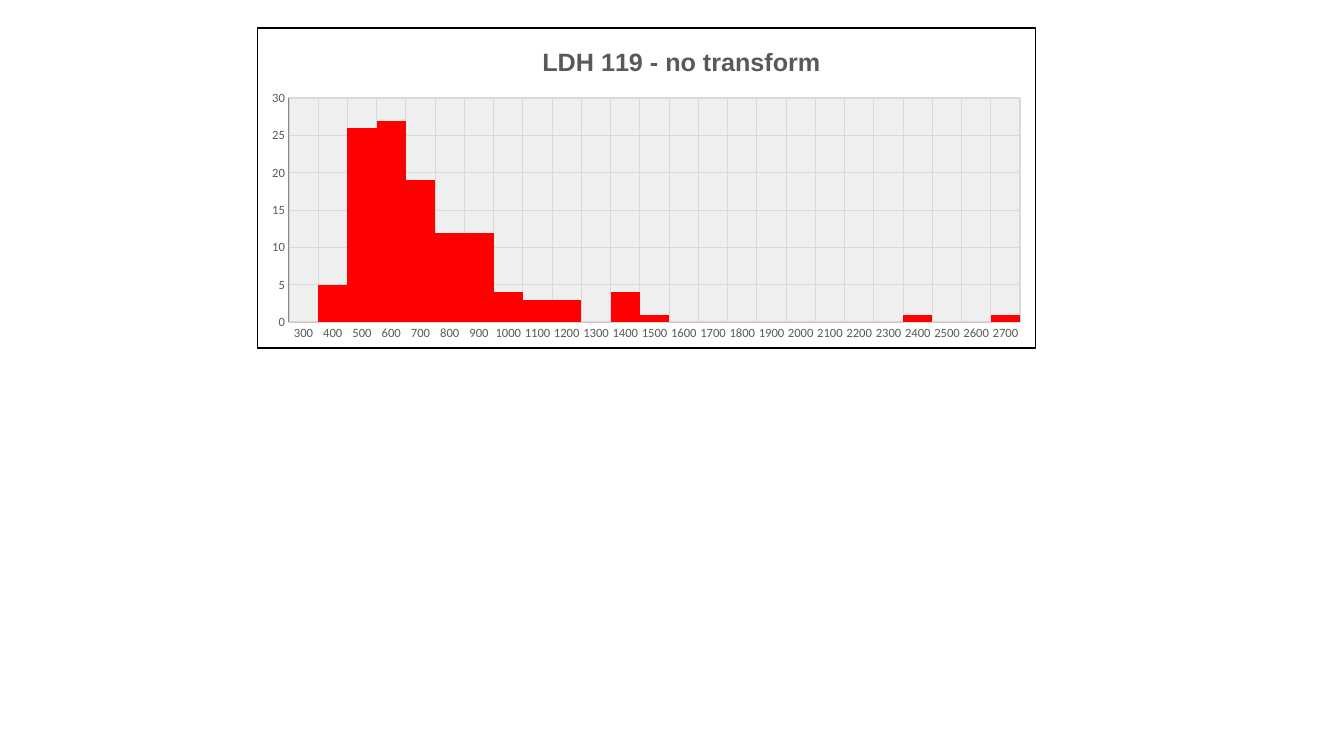
"""Build a slide with a histogram of LDH values before any transform."""
from dataclasses import dataclass

from pptx import Presentation
from pptx.chart.axis import CategoryAxis, ValueAxis
from pptx.chart.chart import Chart
from pptx.chart.data import CategoryChartData
from pptx.dml.color import RGBColor
from pptx.enum.chart import XL_CHART_TYPE, XL_TICK_MARK
from pptx.oxml import parse_xml
from pptx.oxml.ns import nsdecls, qn
from pptx.util import Emu, Pt

COLUMNS = XL_CHART_TYPE.COLUMN_CLUSTERED
NO_TICK = XL_TICK_MARK.NONE
EMU_PER_PX = 9144
BLANK_LAYOUT = 6


@dataclass(frozen=True)
class Theme:
    """Colours, fonts and type sizes."""
    black: str = "000000"
    label: str = "595959"
    grid: str = "D9D9D9"
    axis: str = "868686"
    bar: str = "FF0000"
    plot: str = "7C7C7C"
    plot_alpha: int = 12
    body_font: str = "Calibri"
    title_font: str = "Arial"
    chart_size: int = 10
    axis_size: int = 9
    title_size: int = 18


@dataclass(frozen=True)
class Frame:
    """A rectangle in px."""
    left: int
    top: int
    width: int
    height: int


THEME = Theme()
PAGE_WIDTH, PAGE_HEIGHT = 1333, 750
CHART_FRAME = Frame(255, 27, 773, 319)
PLOT_LAYOUT = {"x": 0.04, "y": 0.22, "w": 0.94, "h": 0.7}
TITLE_LAYOUT = {"x": 0.36, "y": 0.04}
TITLE = "LDH 119 - no transform"
BINS = range(300, 2701, 100)
COUNTS = {400: 5, 500: 26, 600: 27, 700: 19, 800: 12, 900: 12, 1000: 4,
          1100: 3, 1200: 3, 1400: 4, 1500: 1, 2400: 1, 2700: 1}


def px(length: int) -> Emu:
    """Turn px into EMU."""
    return Emu(length * EMU_PER_PX)


def format_font(font, size: int, color: str, name: str, bold: bool = False) -> None:
    """Set the size, weight, typeface and colour of a font."""
    for key, value in {"size": Pt(size), "bold": bold, "name": name}.items():
        setattr(font, key, value)
    font.color.rgb = RGBColor.from_string(color)


def format_line(line, color: str, width: float) -> None:
    """Set the colour and width of a line."""
    line.color.rgb = RGBColor.from_string(color)
    line.width = Pt(width)


def format_axis(axis: CategoryAxis | ValueAxis, line_color: str) -> None:
    """Give an axis its gridlines, line and labels without ticks."""
    settings = {"major_tick_mark": NO_TICK, "minor_tick_mark": NO_TICK,
                "has_major_gridlines": True}
    for key, value in settings.items():
        setattr(axis, key, value)
    format_line(axis.major_gridlines.format.line, THEME.grid, 0.75)
    format_line(axis.format.line, line_color, 0.75)
    format_font(axis.tick_labels.font, THEME.axis_size, THEME.label, THEME.body_font)


def place(element, index: int, layout: dict[str, float], target: str = "") -> None:
    """Give a chart part a manual layout, as fractions of the chart."""
    for old in element.findall(qn("c:layout")):
        element.remove(old)
    inner = f'<c:layoutTarget val="{target}"/>' if target else ""
    modes = "".join(f'<c:{key}Mode val="edge"/>' for key in "xy")
    values = "".join(f'<c:{key} val="{value}"/>' for key, value in layout.items())
    element.insert(index, parse_xml(
        f'<c:layout {nsdecls("c")}><c:manualLayout>{inner}{modes}{values}'
        '</c:manualLayout></c:layout>'))


def area_format(fill: str, alpha: int, line: str, width: float):
    """Make the fill and border of a chart area."""
    return parse_xml(
        f'<c:spPr {nsdecls("c", "a")}><a:solidFill><a:srgbClr val="{fill}">'
        f'<a:alpha val="{alpha * 1000}"/></a:srgbClr></a:solidFill>'
        f'<a:ln w="{Pt(width)}"><a:solidFill><a:srgbClr val="{line}"/></a:solidFill>'
        '</a:ln></c:spPr>')


def add_title(chart: Chart) -> None:
    """Write and place the chart title."""
    title = chart.chart_title
    title.include_in_layout = False
    para = title.text_frame.paragraphs[0]
    span = para.add_run()
    span.text = TITLE
    format_font(span.font, THEME.title_size, THEME.label, THEME.title_font, True)
    place(title._element, 1, TITLE_LAYOUT)


def add_histogram(page) -> None:
    """Draw the histogram on the page."""
    data = CategoryChartData()
    data.categories = [str(edge) for edge in BINS]
    data.add_series("Series 1", [COUNTS.get(edge, 0) for edge in BINS])
    box = CHART_FRAME
    chart = page.shapes.add_chart(
        COLUMNS, px(box.left), px(box.top), px(box.width), px(box.height), data).chart
    chart.has_legend = False
    format_font(chart.font, THEME.chart_size, THEME.black, THEME.body_font)
    add_title(chart)

    format_axis(chart.category_axis, THEME.grid)
    format_axis(chart.value_axis, THEME.axis)
    scale = {"minimum_scale": 0, "maximum_scale": 30, "major_unit": 5}
    for key, value in scale.items():
        setattr(chart.value_axis, key, value)

    plot = chart.plots[0]
    for key, value in {"gap_width": 0, "vary_by_categories": False}.items():
        setattr(plot, key, value)
    bars = plot.series[0].format
    bars.fill.solid()
    bars.fill.fore_color.rgb = RGBColor.from_string(THEME.bar)

    chart_part = chart.element.find(qn("c:chart"))
    plot_area = chart_part.find(qn("c:plotArea"))
    place(plot_area, 0, PLOT_LAYOUT, "inner")
    plot_area.append(area_format(THEME.plot, THEME.plot_alpha, THEME.grid, 1.5))
    chart_part.addnext(area_format("FFFFFF", 100, THEME.black, 1))


def main() -> None:
    """Build and save the deck."""
    deck = Presentation()
    deck.slide_width, deck.slide_height = px(PAGE_WIDTH), px(PAGE_HEIGHT)
    page = deck.slides.add_slide(deck.slide_layouts[BLANK_LAYOUT])
    add_histogram(page)
    deck.save("out.pptx")


if __name__ == "__main__":
    main()
